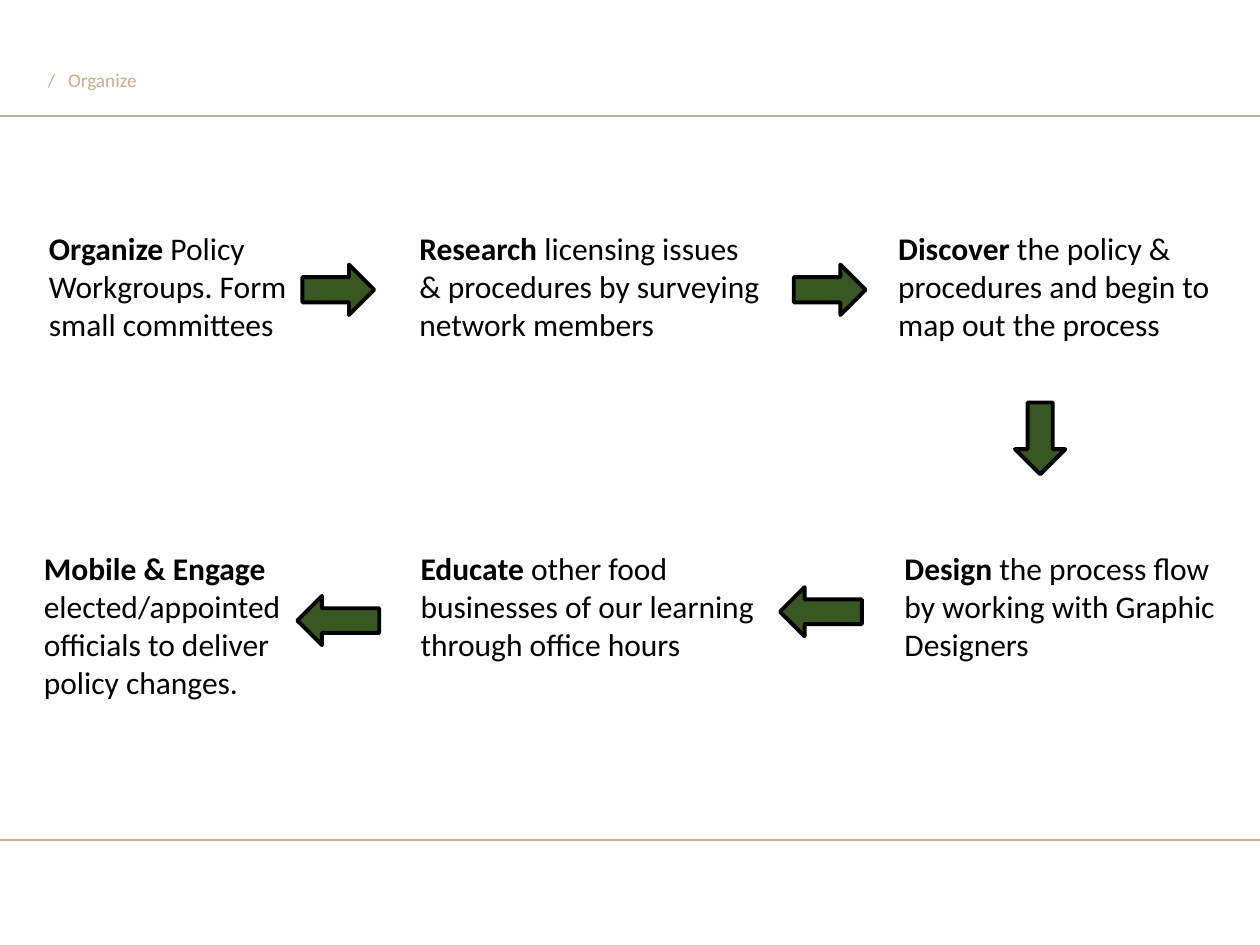
"""Build the policy workgroup process slide."""
from dataclasses import dataclass

from lxml import etree
from pptx import Presentation
from pptx.dml.color import RGBColor
from pptx.enum.shapes import MSO_CONNECTOR, MSO_SHAPE
from pptx.enum.text import MSO_ANCHOR, MSO_AUTO_SIZE, PP_ALIGN
from pptx.oxml.ns import qn
from pptx.slide import Slide
from pptx.util import Inches, Pt

ARROW = MSO_SHAPE.RIGHT_ARROW
STRAIGHT = MSO_CONNECTOR.STRAIGHT
LEFT = PP_ALIGN.LEFT
TOP = MSO_ANCHOR.TOP
FIT_SHAPE = MSO_AUTO_SIZE.SHAPE_TO_FIT_TEXT
NO_FIT = MSO_AUTO_SIZE.NONE

FONT = "Calibri"
COLORS = {"text": "000000", "header": "CEAD8C", "rule": "C4AD96", "arrow": "385723"}
UPPER_ROW, LOWER_ROW = 1.77, 4.31


@dataclass
class Step:
    left: float
    top: float
    width: float
    height: float
    keyword: str
    lines: list[str]


@dataclass
class Arrow:
    left: float
    top: float
    width: float
    height: float
    rotation: int = 0


STEPS = [
    Step(0.29, UPPER_ROW, 2.13, 1.01, "Organize",
         [" Policy", "Workgroups. Form", "small committees"]),
    Step(3.23, UPPER_ROW, 2.93, 1.01, "Research ",
         ["licensing issues & procedures by surveying network members"]),
    Step(7.03, UPPER_ROW, 2.95, 1.01, "Discover ",
         ["the policy & procedures and begin to map out the process"]),
    Step(7.08, LOWER_ROW, 2.87, 1.01, "Design ",
         ["the process flow by working with Graphic Designers"]),
    Step(3.24, LOWER_ROW, 3.26, 1.01, "Educate ",
         ["other food businesses of our learning through office hours"]),
    Step(0.25, LOWER_ROW, 2.56, 1.31, "Mobile & Engage ",
         ["elected/appointed officials to deliver policy changes."]),
]
ARROWS = [
    Arrow(2.4, 2.1, 0.57, 0.4),
    Arrow(6.3, 2.1, 0.57, 0.4),
    Arrow(7.97, 3.28, 0.57, 0.4, 90),
    Arrow(6.19, 4.66, 0.65, 0.39, 180),
    Arrow(2.36, 4.73, 0.65, 0.39, 180),
]
RULES = [0.92, 6.67]


def color(name: str) -> RGBColor:
    return RGBColor.from_string(COLORS[name])


def add_header(page: Slide) -> None:
    title = page.shapes.title
    title.left, title.top = Inches(0.28), Inches(0.49)
    title.width, title.height = Inches(5.01), Inches(0.29)
    frame = title.text_frame
    frame.text = "/\tOrganize"
    frame.auto_size = NO_FIT
    frame.vertical_anchor = TOP
    para = frame.paragraphs[0]
    para.alignment = LEFT
    tabs = etree.SubElement(para._p.get_or_add_pPr(), qn("a:tabLst"))
    etree.SubElement(tabs, qn("a:tab"), pos=str(Inches(0.16)), algn="l")
    para.font.name, para.font.size = FONT, Pt(11)
    para.font.color.rgb = color("header")


def add_rule(page: Slide, top: float) -> None:
    rule = page.shapes.add_connector(
        STRAIGHT, Inches(0), Inches(top), Inches(10), Inches(top))
    rule.line.color.rgb = color("rule")
    rule.line.width = Pt(1.25)
    etree.SubElement(rule._element.spPr, qn("a:effectLst"))


def add_step(page: Slide, step: Step) -> None:
    box = page.shapes.add_textbox(
        Inches(step.left), Inches(step.top), Inches(step.width), Inches(step.height))
    frame = box.text_frame
    frame.word_wrap = True
    frame.auto_size = FIT_SHAPE
    for index, line in enumerate(step.lines):
        para = frame.add_paragraph() if index else frame.paragraphs[0]
        para.font.name, para.font.size = FONT, Pt(18)
        para.font.color.rgb = color("text")
        if index == 0:
            span = para.add_run()
            span.text = step.keyword
            span.font.bold = True
        para.add_run().text = line


def add_arrow(page: Slide, arrow: Arrow) -> None:
    shape = page.shapes.add_shape(
        ARROW, Inches(arrow.left), Inches(arrow.top),
        Inches(arrow.width), Inches(arrow.height))
    shape.rotation = arrow.rotation
    shape.shadow.inherit = False
    shape.fill.solid()
    shape.fill.fore_color.rgb = color("arrow")
    shape.line.color.rgb = color("text")
    shape.line.width = Pt(2.25)


def main() -> None:
    deck = Presentation()
    deck.slide_width, deck.slide_height = Inches(10), Inches(7.5)
    page = deck.slides.add_slide(deck.slide_layouts.get_by_name("Title Only"))
    add_header(page)
    for top in RULES:
        add_rule(page, top)
    for step in STEPS:
        add_step(page, step)
    for arrow in ARROWS:
        add_arrow(page, arrow)
    deck.save("out.pptx")


if __name__ == "__main__":
    main()
